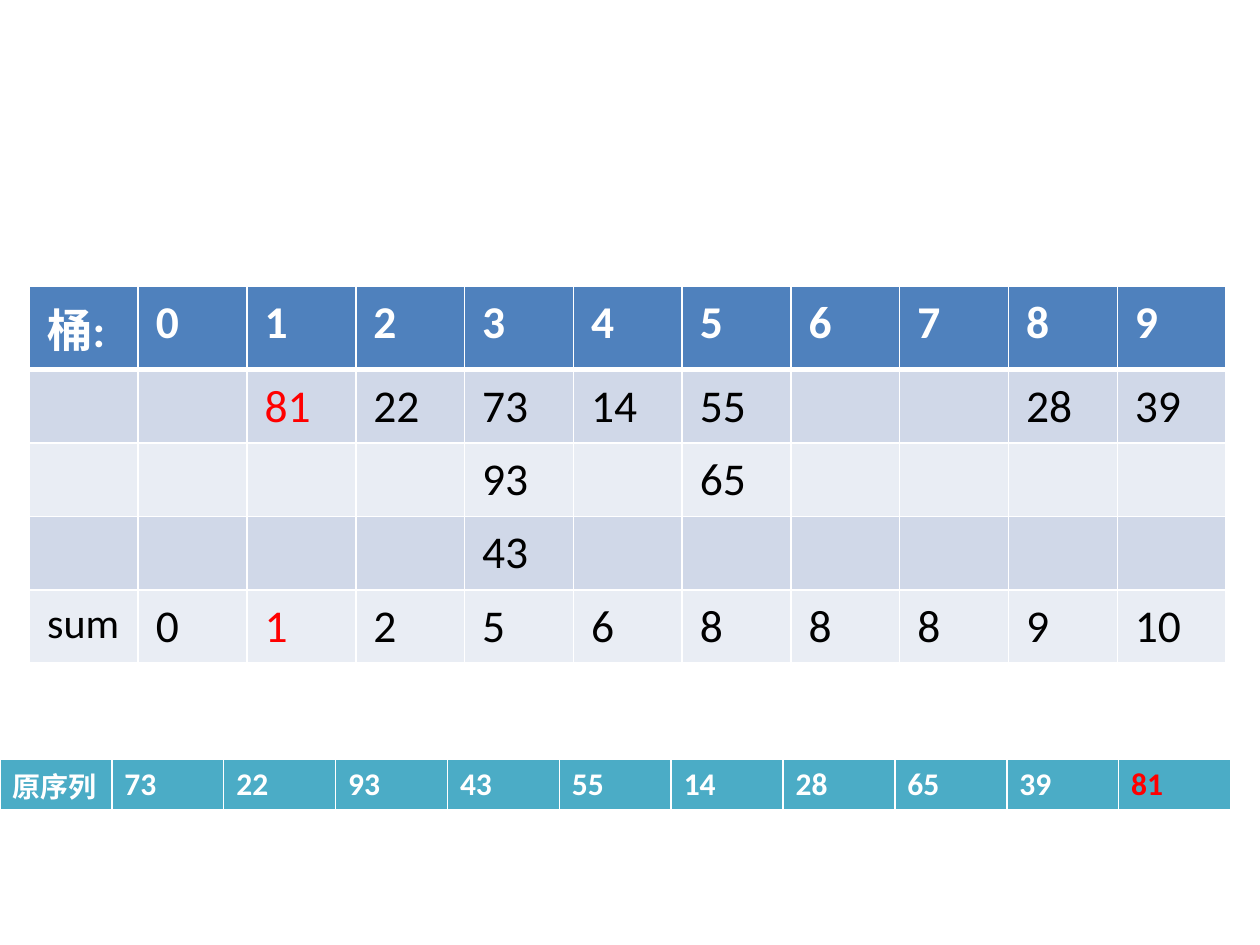
from lxml.etree import SubElement
from pptx import Presentation
from pptx.dml.color import RGBColor
from pptx.oxml.ns import qn
from pptx.util import Pt

FONT = "Calibri"
WHITE, BLACK, RED = "FFFFFF", "000000", "FF0000"
BLUE, TEAL, BANDS = "4F81BD", "4BACC6", ("E9EDF4", "D0D8E8")

BUCKETS = [
    ["桶:", "0", "1", "2", "3", "4", "5", "6", "7", "8", "9"],
    ["", "", "81", "22", "73", "14", "55", "", "", "28", "39"],
    ["", "", "", "", "93", "", "65", "", "", "", ""],
    ["", "", "", "", "43", "", "", "", "", "", ""],
    ["sum", "0", "1", "2", "5", "6", "8", "8", "8", "9", "10"],
]
SEQUENCE = [["原序列", "73", "22", "93", "43", "55", "14", "28", "65", "39", "81"]]


def rgb(value):
    """Turn a hex string into a colour."""
    return RGBColor.from_string(value)


def write(cell, text, size, color, bold):
    """Put formatted text into a cell."""
    run = cell.text_frame.paragraphs[0].add_run()
    run.text = text
    font = run.font
    font.name, font.size, font.bold = FONT, Pt(size), bold
    font.color.rgb = rgb(color)


def add_border(cell, side, width):
    """Draw one white cell edge."""
    edge = SubElement(cell._tc.get_or_add_tcPr(), qn(f"a:ln{side}"), w=str(Pt(width)))
    fill = SubElement(edge, qn("a:solidFill"))
    SubElement(fill, qn("a:srgbClr"), val=WHITE)


def add_grid(slide, rows, left, top, width, row_height, inset, header_fill,
             size, label_sizes, red_cells):
    """Add a table with a bold header row and banded rows below it."""
    columns = len(rows[0])
    table = slide.shapes.add_table(len(rows), columns, Pt(left), Pt(top),
                                   Pt(width), Pt(row_height * len(rows))).table
    table.first_row = table.horz_banding = False
    for column in table.columns:
        column.width = Pt(width / columns)
    for r, row in enumerate(rows):
        header = r == 0
        for c, text in enumerate(row):
            cell = table.cell(r, c)
            cell.margin_left = cell.margin_right = Pt(inset)
            cell.margin_top = cell.margin_bottom = Pt(inset / 2)
            for side, weight in (("L", 1), ("R", 1), ("T", 3 if r == 1 else 1),
                                 ("B", 3 if header else 1)):
                add_border(cell, side, weight)
            cell.fill.solid()
            cell.fill.fore_color.rgb = rgb(header_fill if header else BANDS[r % 2])
            if text:
                color = RED if (r, c) in red_cells else WHITE if header else BLACK
                write(cell, text, size=label_sizes.get(text, size), color=color, bold=header)


def main():
    """Build the bucket sort slide."""
    deck = Presentation()
    deck.slide_width, deck.slide_height = Pt(720), Pt(540)
    slide = deck.slides.add_slide(deck.slide_layouts[6])
    add_grid(slide, BUCKETS, left=16.8, top=163.5, width=684, row_height=41.7,
             inset=10.1, header_fill=BLUE, size=26, label_sizes={"sum": 24},
             red_cells={(1, 2), (4, 2)})
    add_grid(slide, SEQUENCE, left=0, top=433.6, width=703.2, row_height=29.2,
             inset=7.2, header_fill=TEAL, size=18, label_sizes={"原序列": 16},
             red_cells={(0, 10)})
    deck.save("out.pptx")


if __name__ == "__main__":
    main()
